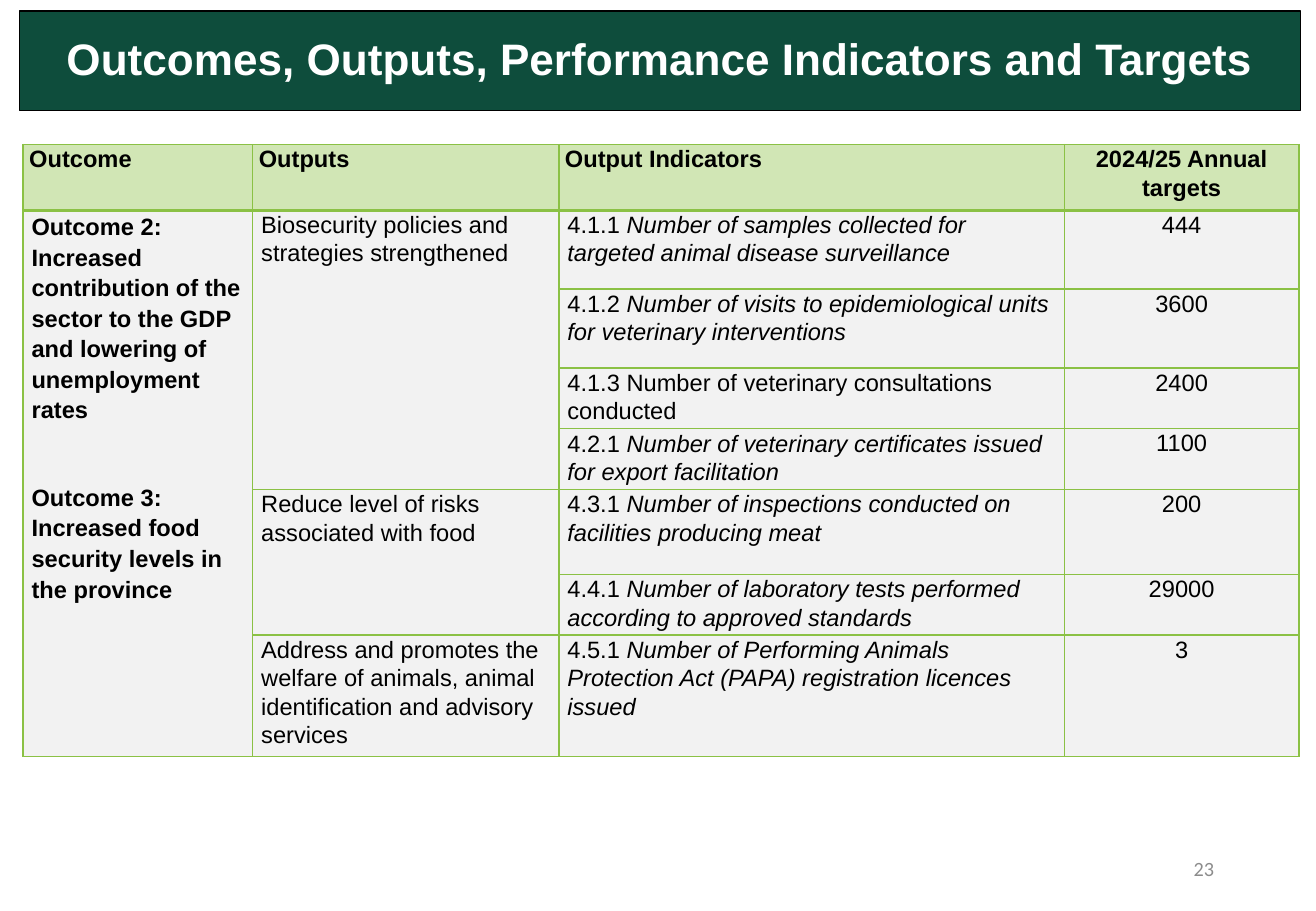
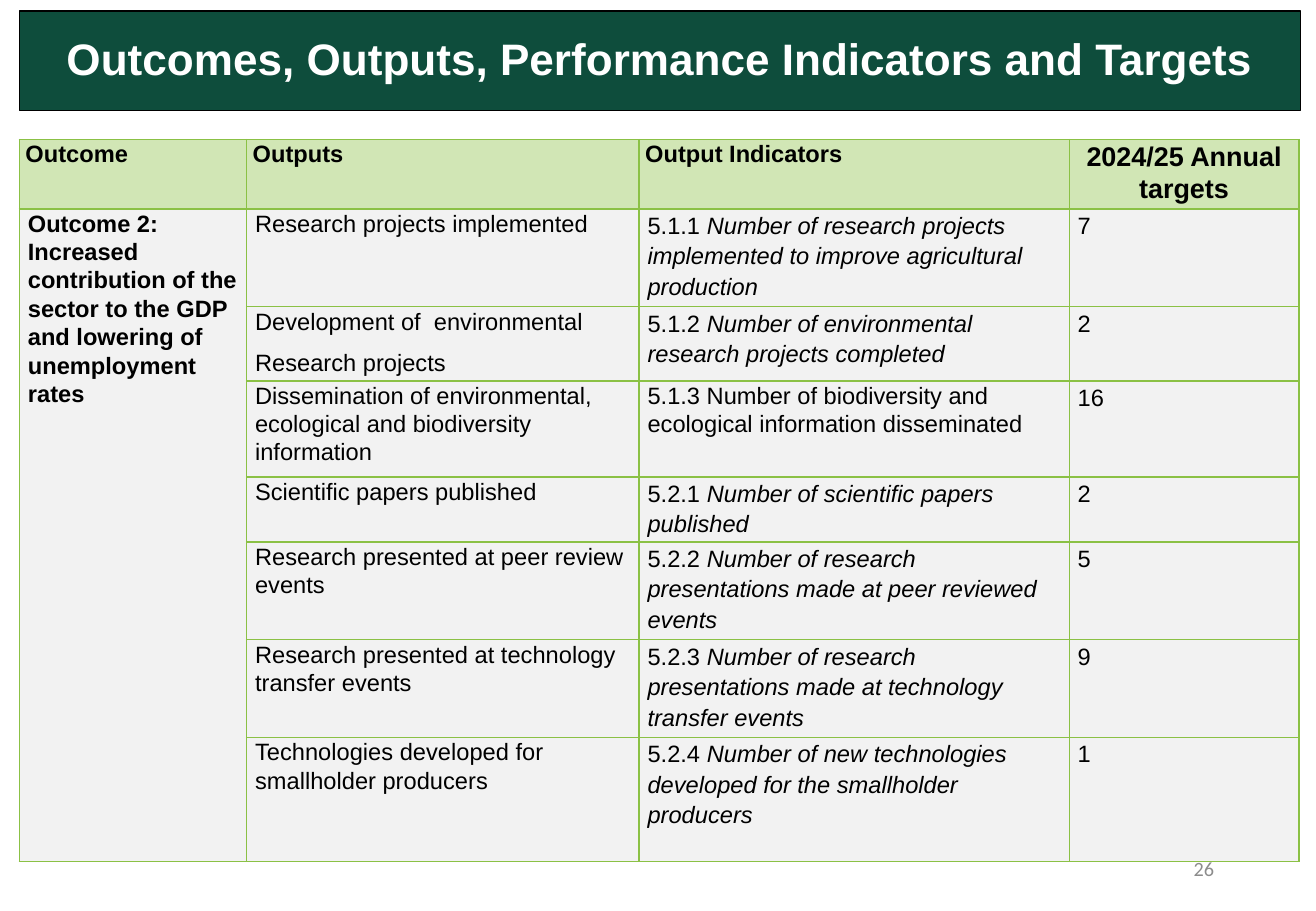
from dataclasses import dataclass
from lxml.etree import SubElement
from pptx import Presentation
from pptx.dml.color import RGBColor
from pptx.enum.text import MSO_ANCHOR, MSO_AUTO_SIZE, PP_ALIGN
from pptx.oxml.ns import qn
from pptx.util import Inches, Pt

GREEN = RGBColor(0x0E, 0x4D, 0x3C)
BORDER = RGBColor(0x8B, 0xC1, 0x45)
HEADER_FILL = RGBColor(0xD1, 0xE6, 0xB5)
BODY_FILL = RGBColor(0xF2, 0xF2, 0xF2)
BLACK = RGBColor(0, 0, 0)
WHITE = RGBColor(0xFF, 0xFF, 0xFF)
GREY = RGBColor(0x8C, 0x8C, 0x8C)

TITLE = "Outcomes, Outputs, Performance Indicators and Targets"
HEADERS = ["Outcome", "Outputs", "Output Indicators", "2024/25 Annual targets"]
OUTCOME_2 = ("Outcome 2: Increased contribution of the sector to the GDP "
             "and lowering of unemployment rates")
OUTCOME_3 = "Outcome 3: Increased food security levels in the province"
TITLE_BOX = (0.16, 0.09, 10.54, 0.82)
NUMBER_BOX = (7.65, 6.95, 2.44, 0.4)


@dataclass
class TargetPage:
    number: int
    left: float
    top: float
    cols: list
    rows: list
    outcomes: list
    outputs: list  # (output, [(indicator, target)]); text after "|" is italic
    outcome_spacing: float
    indicator_spacing: float
    target_spacing: float
    target_align: PP_ALIGN
    target_header_size: int


PAGES = [
    TargetPage(
        23, 0.19, 1.19, [1.89, 2.52, 4.16, 1.93],
        [0.54, 0.65, 0.65, 0.47, 0.47, 0.7, 0.49, 0.7],
        [OUTCOME_2, OUTCOME_3],
        [("Biosecurity policies and strategies strengthened", [
            ("4.1.1 |Number of samples collected for targeted animal disease surveillance", 444),
            ("4.1.2 |Number of visits to epidemiological units for veterinary interventions", 3600),
            ("4.1.3 Number of veterinary consultations conducted", 2400),
            ("4.2.1 |Number of veterinary certificates issued for export facilitation", 1100)]),
         ("Reduce level of risks associated with food", [
             ("4.3.1 |Number of inspections conducted on facilities producing meat", 200),
             ("4.4.1 |Number of laboratory tests performed according to approved standards", 29000)]),
         ("Address and promotes the welfare of animals, animal identification and advisory services", [
             ("4.5.1 |Number of Performing Animals Protection Act (PAPA) registration licences issued", 3)])],
        outcome_spacing=1.15, indicator_spacing=1.07, target_spacing=1.06,
        target_align=PP_ALIGN.CENTER, target_header_size=14),
    TargetPage(
        26, 0.16, 1.15, [1.87, 3.23, 3.54, 1.89],
        [0.52, 0.68, 0.55, 0.79, 0.45, 0.68, 0.68, 1.02],
        [OUTCOME_2],
        [("Research projects implemented", [
            ("5.1.1 |Number of research projects implemented to improve agricultural production", 7)]),
         ("Development of  environmental\nResearch projects", [
             ("5.1.2 |Number of environmental research projects completed", 2)]),
         ("Dissemination of environmental, ecological and biodiversity information", [
             ("5.1.3 Number of biodiversity and ecological information disseminated", 16)]),
         ("Scientific papers published", [
             ("5.2.1 |Number of scientific papers published", 2)]),
         ("Research presented at peer review events", [
             ("5.2.2 |Number of research presentations made at peer reviewed events", 5)]),
         ("Research presented at technology transfer events", [
             ("5.2.3 |Number of research presentations made at technology transfer events", 9)]),
         ("Technologies developed for smallholder producers", [
             ("5.2.4 |Number of new technologies developed for the smallholder producers", 1)])],
        outcome_spacing=1.07, indicator_spacing=1.15, target_spacing=1.15,
        target_align=PP_ALIGN.LEFT, target_header_size=16),
]


def set_font(p, size, color, name="Arial", bold=False):
    f = p.font
    f.name, f.size, f.bold = name, Pt(size), bold
    f.color.rgb = color


def add_title(s, box):
    sp = s.shapes.title
    sp.left, sp.top, sp.width, sp.height = map(Inches, box)
    sp.fill.solid()
    sp.fill.fore_color.rgb = GREEN
    sp.line.color.rgb = BLACK
    sp.line.width = Pt(0.75)
    tf = sp.text_frame
    tf.text = TITLE
    tf.word_wrap = True
    tf.auto_size = MSO_AUTO_SIZE.NONE
    tf.vertical_anchor = MSO_ANCHOR.MIDDLE
    p = tf.paragraphs[0]
    p.alignment, p.line_spacing = PP_ALIGN.CENTER, 0.9
    set_font(p, 26.1, WHITE, bold=True)


def add_page_number(s, box, number):
    tf = s.shapes.add_textbox(*map(Inches, box)).text_frame
    tf.text = str(number)
    tf.word_wrap = True
    tf.vertical_anchor = MSO_ANCHOR.MIDDLE
    p = tf.paragraphs[0]
    p.alignment = PP_ALIGN.RIGHT
    set_font(p, 12, GREY, "Calibri")


def style_cell(cell, header):
    """Borders go in before the fill, as the schema orders them."""
    tc_pr = cell._tc.get_or_add_tcPr()
    for side in "LRTB":
        width = Pt(2 if header and side == "B" else 1)
        ln = SubElement(tc_pr, qn(f"a:ln{side}"), w=str(width))
        fill = SubElement(ln, qn("a:solidFill"))
        SubElement(fill, qn("a:srgbClr"), val=str(BORDER))
    cell.fill.solid()
    cell.fill.fore_color.rgb = HEADER_FILL if header else BODY_FILL
    cell.margin_left = cell.margin_right = Inches(0.05 if header else 0.07)
    cell.margin_top = cell.margin_bottom = 0


def write_cell(cell, paragraphs, spacing=1.07, align=PP_ALIGN.LEFT, size=14,
               bold=False, after=8):
    tf = cell.text_frame
    for i, text in enumerate(paragraphs):
        p = tf.paragraphs[0] if i == 0 else tf.add_paragraph()
        p.alignment, p.line_spacing, p.space_after = align, spacing, Pt(after)
        set_font(p, size, BLACK, bold=bold)
        plain, _, italic = text.partition("|")
        p.add_run().text = plain
        if italic:
            r = p.add_run()
            r.text = italic
            r.font.italic = True


def add_target_table(s, page):
    n_rows, n_cols = len(page.rows), len(page.cols)
    box = (page.left, page.top, sum(page.cols), sum(page.rows))
    table = s.shapes.add_table(n_rows, n_cols, *map(Inches, box)).table
    table.horz_banding = False
    for col, width in zip(table.columns, page.cols):
        col.width = Inches(width)
    for i, (row, height) in enumerate(zip(table.rows, page.rows)):
        row.height = Inches(height)
        for cell in row.cells:
            style_cell(cell, header=i == 0)

    for c, text in enumerate(HEADERS):
        last = c == n_cols - 1
        write_cell(table.cell(0, c), [text], bold=True,
                   align=PP_ALIGN.CENTER if last else PP_ALIGN.LEFT,
                   size=page.target_header_size if last else 14)

    table.cell(1, 0).merge(table.cell(n_rows - 1, 0))
    write_cell(table.cell(1, 0), page.outcomes, page.outcome_spacing,
               bold=True, after=34)
    r = 1
    for output, indicators in page.outputs:
        if len(indicators) > 1:
            table.cell(r, 1).merge(table.cell(r + len(indicators) - 1, 1))
        write_cell(table.cell(r, 1), output.split("\n"))
        for indicator, target in indicators:
            spacing = page.indicator_spacing if "|" in indicator else 1.07
            write_cell(table.cell(r, 2), [indicator], spacing)
            write_cell(table.cell(r, 3), [str(target)], page.target_spacing,
                       page.target_align)
            r += 1


def add_target_slide(prs, page):
    s = prs.slides.add_slide(prs.slide_layouts[5])
    add_title(s, TITLE_BOX)
    add_page_number(s, NUMBER_BOX, page.number)
    add_target_table(s, page)


def main():
    prs = Presentation()
    prs.slide_width, prs.slide_height = Inches(10.83), Inches(7.5)
    for page in PAGES:
        add_target_slide(prs, page)
    prs.save("out.pptx")


if __name__ == "__main__":
    main()
